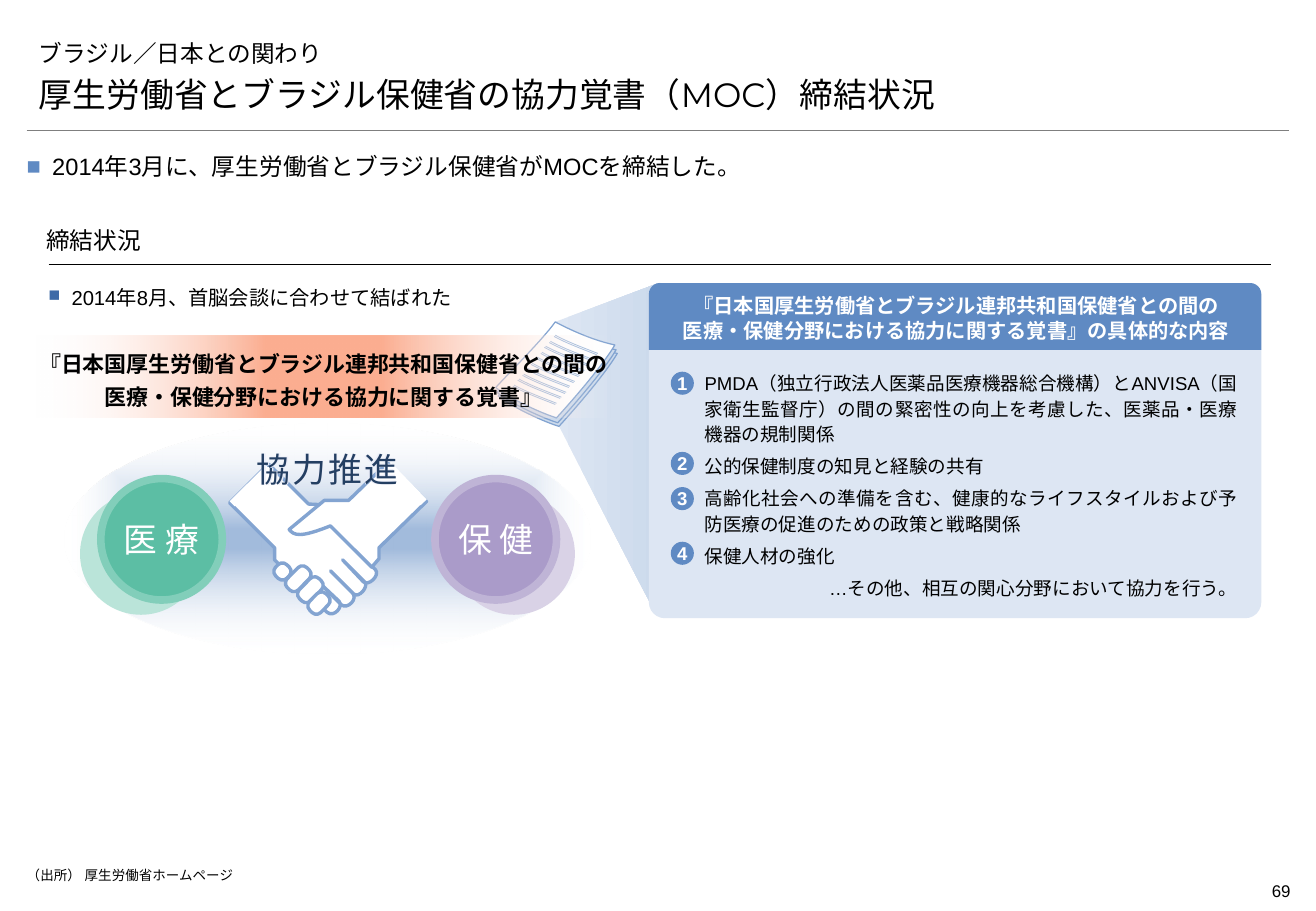
from lxml import etree
from pptx import Presentation
from pptx.dml.color import RGBColor
from pptx.enum.lang import MSO_LANGUAGE_ID
from pptx.enum.shapes import MSO_CONNECTOR, MSO_SHAPE
from pptx.enum.text import MSO_ANCHOR, MSO_AUTO_SIZE, PP_ALIGN
from pptx.oxml import parse_xml
from pptx.oxml.ns import nsdecls, qn
from pptx.util import Pt

PX = 9144
LEFT, CENTER, RIGHT, JUSTIFY = PP_ALIGN.LEFT, PP_ALIGN.CENTER, PP_ALIGN.RIGHT, PP_ALIGN.JUSTIFY
TOP, MIDDLE, BOTTOM = MSO_ANCHOR.TOP, MSO_ANCHOR.MIDDLE, MSO_ANCHOR.BOTTOM
RECT, OVAL, ROUNDED = MSO_SHAPE.RECTANGLE, MSO_SHAPE.OVAL, MSO_SHAPE.ROUNDED_RECTANGLE
ROUND_TOP = MSO_SHAPE.ROUND_2_SAME_RECTANGLE
STRAIGHT, JAPANESE, NO_FIT = MSO_CONNECTOR.STRAIGHT, MSO_LANGUAGE_ID.JAPANESE, MSO_AUTO_SIZE.NONE
ARIAL, MONTSERRAT, NOTO = "Arial", "Montserrat", "Noto Sans CJK JP"
PADDED, FLUSH = (10, 5, 10, 5), (0, 0, 0, 0)

BLACK, WHITE, GRAY = RGBColor(0, 0, 0), RGBColor(255, 255, 255), RGBColor(0x7F, 0x7F, 0x7F)
BLUE, DEEP_BLUE, NAVY = RGBColor(0x5F, 0x8A, 0xC3), RGBColor(0x3D, 0x6A, 0xA7), RGBColor(0x24, 0x3F, 0x62)
PALE_BLUE, PAPER_BLUE = RGBColor(0xDD, 0xE6, 0xF3), RGBColor(0xCC, 0xDA, 0xEC)
HAND_BLUE, SOFT_BLUE, HALO = RGBColor(0x83, 0xA4, 0xD1), RGBColor(0xA2, 0xBB, 0xDC), RGBColor(0xEA, 0xED, 0xF8)
SALMON = RGBColor(0xFC, 0xAE, 0x91)
GREENS = RGBColor(0x5C, 0xBE, 0xA4), RGBColor(0x82, 0xCE, 0xBA), RGBColor(0xBA, 0xE4, 0xD9)
PURPLES = RGBColor(0xAA, 0x9B, 0xC9), RGBColor(0xBF, 0xB4, 0xD6), RGBColor(0xD9, 0xD2, 0xE6)

LEFT_HAND = [(32, 0), (0, 32), (37, 69), (37, 79), (80, 122), (86, 127, 94, 117, 90, 113),
             (73, 97), (92, 116), (97, 120, 106, 111, 101, 106), (83, 88), (102, 107),
             (106, 111, 115, 101, 111, 97), (93, 79), (110, 97), (114, 101, 124, 92, 120, 87),
             (73, 41), (84, 34), (65, 33)]
RIGHT_HAND = [(130, -1), (98, 30), (78, 30), (49, 54), (53, 59, 58, 61, 83, 51),
              (117, 85), (123, 78), (123, 69), (162, 31)]
FINGERS = [(37, 82, 13, 13), (45, 88, 23, 13), (55, 97, 23, 13), (64, 108, 19, 13)]
CUFFS = [(-4, 15, 42, 6, 315.3), (124, 13, 42, 7, 46)]
SHEET = [(49, 0), (49, 0, 74, 14, 98, 19), (85, 41, 50, 79, 50, 79),
         (34, 74, 8, 61, 0, 54), (12, 41, 39, 14, 49, 0)]
TEXT_ROW = [(0, 0), (11, 6, 25, 11, 35, 15)]
CALLOUT = [(85, 0), (0, 32), (1, 57, 2, 93, 3, 118), (5, 121, 79, 267, 83, 272)]

TERMS = [
    (16, "PMDA（独立行政法人医薬品医療機器総合機構）とANVISA（国家衛生監督庁）の間の緊密性の向上を考慮した、医薬品・医療機器の規制関係"),
    (82, "公的保健制度の知見と経験の共有"),
    (111, "高齢化社会への準備を含む、健康的なライフスタイルおよび予防医療の促進のための政策と戦略関係"),
    (156, "保健人材の強化"),
]
MEMO = "『日本国厚生労働省とブラジル連邦共和国保健省との間の\n医療・保健分野における協力に関する覚書』"


def emu(*lengths):
    return [round(length * PX) for length in lengths]


def style(shape, fill=None, line=None, width=1):
    shape.shadow.inherit = False
    if fill is None:
        shape.fill.background()
    else:
        shape.fill.solid()
        shape.fill.fore_color.rgb = fill
    if line is None:
        shape.line.fill.background()
    else:
        shape.line.color.rgb = line
        shape.line.width = Pt(width)
    return shape


def add_shape(page, kind, box, *look):
    return style(page.shapes.add_shape(kind, *emu(*box)), *look)


def add_outline(page, origin, steps, look, closed=True):
    left, top = origin
    points = [emu(left + x, top + y) for step in steps for x, y in zip(step[::2], step[1::2])]
    builder = page.shapes.build_freeform(*points[0])
    builder.add_line_segments(points[1:], close=closed)
    shape = builder.convert_to_shape()
    segments = iter(list(shape._element.iter(qn("a:lnTo"))))
    for step in steps[1:]:
        segment = next(segments)
        if len(step) == 6:
            segment.tag
            curve = etree.Element(qn("a:cubicBezTo"))
            segment.addprevious(curve)
            for part in (segment, next(segments), next(segments)):
                curve.append(part[0])
                part.getparent().remove(part)
    return style(shape, *look)


def add_rule(page, box, color, width):
    left, top, length = box
    rule = page.shapes.add_connector(STRAIGHT, *emu(left, top, left + length, top))
    rule.line.color.rgb = color
    rule.line.width = Pt(width)
    etree.SubElement(rule._element.spPr, qn("a:effectLst"))


def add_gradient(shape, stops, direction):
    marks = "".join(
        f'<a:gs pos="{place * 1000}"><a:srgbClr val="{color}"><a:alpha val="{alpha * 1000}"/></a:srgbClr></a:gs>'
        for place, color, alpha in stops)
    shape.fill.solid()
    solid = shape._element.spPr.find(qn("a:solidFill"))
    solid.getparent().replace(solid, parse_xml(
        f'<a:gradFill {nsdecls("a")} rotWithShape="1"><a:gsLst>{marks}</a:gsLst>{direction}</a:gradFill>'))


def write(shape, lines, size, color=BLACK, font=ARIAL, bold=False, align=LEFT, anchor=TOP,
          insets=PADDED, wrap=True, spacing=1.0, after=0, margin=0, indent=0, bullet=None, bullet_size=100):
    frame = shape.text_frame
    frame.word_wrap, frame.auto_size, frame.vertical_anchor = wrap, NO_FIT, anchor
    frame.margin_left, frame.margin_top, frame.margin_right, frame.margin_bottom = emu(*insets)
    for number, line in enumerate(lines):
        para = frame.add_paragraph() if number else frame.paragraphs[0]
        para.text = line
        props = para._p.get_or_add_pPr()
        props.set("marL", str(margin * PX))
        props.set("indent", str(indent * PX))
        if bullet is None:
            etree.SubElement(props, qn("a:buNone"))
        else:
            tint = etree.SubElement(props, qn("a:buClr"))
            etree.SubElement(tint, qn("a:srgbClr")).set("val", str(bullet))
            etree.SubElement(props, qn("a:buSzPct")).set("val", str(bullet_size * 1000))
            etree.SubElement(props, qn("a:buChar")).set("char", "■")
        para.alignment, para.line_spacing = align, spacing
        para.space_before, para.space_after = Pt(0), Pt(after)
        for span in para.runs:
            span.font.name, span.font.size, span.font.bold = font, Pt(size), bold
            span.font.color.rgb = color
            span.font.language_id = JAPANESE
            span.font._element.find(qn("a:latin")).addnext(
                parse_xml(f'<a:ea {nsdecls("a")} typeface="{ARIAL if font == ARIAL else NOTO}"/>'))
    return shape


def place(shape, box):
    shape.left, shape.top, shape.width, shape.height = emu(*box)
    return shape


def add_text(page, box, lines, size, **options):
    return write(page.shapes.add_textbox(*emu(*box)), lines, size, **options)


def draw_header(page, box):
    left, top, width, _ = box
    topic, heading, summary = page.placeholders
    write(place(topic, (left, top, width, 39)), ["ブラジル／日本との関わり"], 14,
          font=MONTSERRAT, anchor=BOTTOM)
    write(place(heading, (left, top + 39, width, 39)), ["厚生労働省とブラジル保健省の協力覚書（MOC）締結状況"], 20,
          font=MONTSERRAT, anchor=BOTTOM)
    write(place(summary, (left, top + 102, width, 26)), ["2014年3月に、厚生労働省とブラジル保健省がMOCを締結した。"], 14,
          insets=FLUSH, spacing=1.1, after=2, margin=21, indent=-21, bullet=BLUE)
    add_rule(page, (left, top + 86, width), GRAY, 0.25)


def draw_footer(page, box):
    left, top, width, _ = box
    add_text(page, (left, top, 945, 16), ["（出所） 厚生労働省ホームページ"], 8, insets=FLUSH)
    add_text(page, (left + width - 79, top + 6, 79, 27), ["69"], 10, align=RIGHT, insets=(0, 5, 0, 5))


def draw_section(page, box):
    left, top, width, _ = box
    add_rule(page, (left + 2, top + 32, width - 2), BLACK, 0.75)
    add_text(page, (left, top, width, 31), ["締結状況"], 14, font=MONTSERRAT, anchor=BOTTOM, insets=(0, 5, 0, 8))
    add_text(page, (left - 8, top + 44, 402, 30), ["2014年8月、首脳会談に合わせて結ばれた"], 12,
             after=4, margin=19, indent=-19, bullet=DEEP_BLUE, bullet_size=80)


def draw_terms(page, box):
    left, top, width, height = box
    callout = add_outline(page, (left - 77, top), CALLOUT, (PALE_BLUE,))
    add_gradient(callout, [(0, PALE_BLUE, 100), (100, PAPER_BLUE, 100)], '<a:lin ang="0" scaled="0"/>')
    body_top = top + 55
    panel = add_shape(page, ROUND_TOP, (left, body_top, width, height - 55), PALE_BLUE)
    panel.adjustments[0], panel.adjustments[1] = 0, 0.06
    write(panel, [term for _, term in TERMS] + ["…その他、相互の関心分野において協力を行う。"], 11,
          align=JUSTIFY, insets=(12, 16, 16, 5), spacing=1.14, after=4, margin=30)
    panel.text_frame.paragraphs[-1].alignment = RIGHT
    for number, (offset, _) in enumerate(TERMS, 1):
        badge = add_shape(page, OVAL, (left + 18, body_top + offset + 2, 19, 19), BLUE)
        write(badge, [str(number)], 11, WHITE, bold=True, align=CENTER, anchor=MIDDLE, insets=FLUSH, wrap=False)
    banner = add_shape(page, ROUND_TOP, (left, top, width, 55), BLUE)
    write(banner, [MEMO + "の具体的な内容"], 12, WHITE, NOTO, True, CENTER, MIDDLE, (12, 5, 10, 5))


def draw_hands(page, box):
    left, top = box[:2]
    for hand in (LEFT_HAND, RIGHT_HAND):
        add_outline(page, (left, top), hand, (WHITE, HAND_BLUE, 2))
    for x, y, width, height in FINGERS:
        finger = add_shape(page, ROUNDED, (left + x, top + y, width, height), WHITE, HAND_BLUE, 2)
        finger.adjustments[0], finger.rotation = 0.39, 314.4
    for x, y, width, height, angle in CUFFS:
        add_shape(page, RECT, (left + x, top + y, width, height), WHITE).rotation = angle


def draw_field(page, box, name, colors, shift):
    left, top, width, height = box
    main, rim, shade = colors
    add_shape(page, OVAL, (left + shift, top + 15, width - 6, height - 6), shade, shade, 4.5)
    disc = add_shape(page, OVAL, box, main, rim, 4.5)
    write(disc, [name], 20, WHITE, NOTO, align=CENTER, anchor=MIDDLE, insets=FLUSH, wrap=False)


def draw_cooperation(page, box):
    left, top = box[:2]
    add_gradient(add_shape(page, OVAL, box), [(8, SOFT_BLUE, 100), (100, WHITE, 0)],
                 '<a:path path="shape"><a:fillToRect l="50000" t="50000" r="50000" b="50000"/></a:path>')
    draw_hands(page, (left + 136, top + 33, 162, 127))
    draw_field(page, (left + 305, top + 45, 100, 100), "保 健", PURPLES, 18)
    draw_field(page, (left + 30, top + 45, 100, 100), "医 療", GREENS, -14)


def draw_paper(page, box):
    left, top = box[:2]
    for x, y, fill in ((2, 7, PAPER_BLUE), (1, 4, PAPER_BLUE), (0, 0, WHITE)):
        add_outline(page, (left + x, top + y), SHEET, (fill, HAND_BLUE, 0.75))
    for x, y in ((49, 11), (48, 12)):
        for row in range(10):
            origin = left + x - round(row * 34 / 9), top + y + round(row * 41 / 9)
            add_outline(page, origin, TEXT_ROW, (None, SOFT_BLUE, 0.5), closed=False)


def draw_memo(page, box):
    band = add_shape(page, RECT, box)
    add_gradient(band, [(0, WHITE, 0), (40, SALMON, 100), (60, SALMON, 100), (100, WHITE, 0)],
                 '<a:lin ang="10800000" scaled="0"/>')
    write(band, [MEMO], 13, BLACK, NOTO, True, CENTER, MIDDLE, FLUSH, spacing=1.25)


def draw_slogan(page, box):
    for color, bold, tracking in ((HALO, True, 100), (NAVY, False, 130)):
        label = write(add_shape(page, OVAL, box), ["協力推進"], 20, color, MONTSERRAT, bold, CENTER, MIDDLE, wrap=False)
        props = label.text_frame.paragraphs[0].runs[0].font._element
        props.set("spc", str(tracking))
        if bold:
            props.insert(0, parse_xml(f'<a:ln {nsdecls("a")} w="{Pt(2.48)}"><a:solidFill>'
                                      f'<a:srgbClr val="{WHITE}"/></a:solidFill></a:ln>'))


def main():
    deck = Presentation()
    deck.slide_width, deck.slide_height = emu(1083, 750)
    page = deck.slides.add_slide(deck.slide_layouts[3])
    draw_header(page, (22, 21, 1039, 128))
    draw_footer(page, (22, 714, 1040, 33))
    draw_terms(page, (534, 233, 504, 276))
    draw_section(page, (38, 186, 1008, 74))
    draw_cooperation(page, (53, 349, 433, 189))
    draw_paper(page, (408, 265, 98, 79))
    draw_memo(page, (30, 276, 472, 68))
    draw_slogan(page, (183, 363, 173, 47))
    deck.save("out.pptx")


if __name__ == "__main__":
    main()
